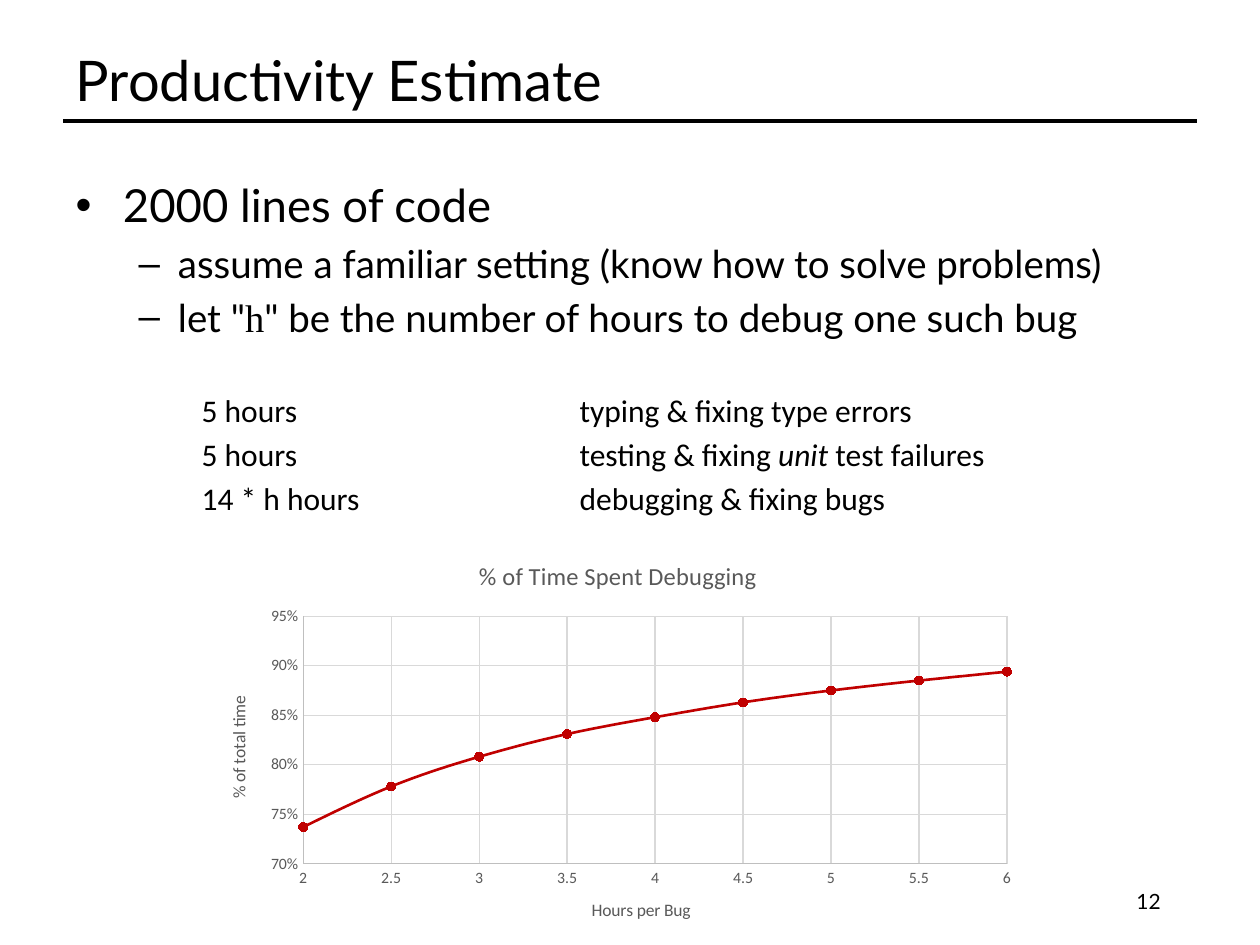
from lxml import etree
from pptx import Presentation
from pptx import util as u
from pptx.chart.data import XyChartData
from pptx.dml.color import RGBColor
from pptx.enum import chart as ch, shapes, text
from pptx.oxml import ns

HUES = {"ink": "000000", "gray": "595959", "axis": "BFBFBF", "grid": "D9D9D9", "red": "C00000"}
HOURS = [2, 2.5, 3, 3.5, 4, 4.5, 5, 5.5, 6]
SHARES = [0.737, 0.778, 0.808, 0.831, 0.848, 0.863, 0.875, 0.885, 0.894]
LINES = [
    (0, 26, "Lato", ["2000 lines of code"]),
    (1, 22, "Lato", ["assume a familiar setting (know how to solve problems)"]),
    (1, 22, "Lato", ['let "', "h", '" be the number of hours to debug one such bug']),
    (2, 18, "Calibri", ["5 hours" + "\t" * 5 + "typing & fixing type errors"]),
    (2, 18, "Calibri", ["5 hours" + "\t" * 5 + "testing & fixing ", "unit", " test failures"]),
    (2, 18, "Calibri", ["14 * h hours" + "\t" * 4 + "debugging & fixing bugs"]),
]


def hue(name):
    """Return the named colour."""
    return RGBColor.from_string(HUES[name])


def style(font, size, face="Lato", tint="ink"):
    """Set size, face and colour of a font."""
    font.size, font.name, font.bold = u.Pt(size), face, False
    font.color.rgb = hue(tint)


def stroke(line, tint, width):
    """Set colour and width of a line."""
    line.color.rgb = hue(tint)
    line.width = u.Pt(width)


def place(shape, box):
    """Move a shape to a box given in centimetres."""
    shape.left, shape.top, shape.width, shape.height = map(u.Cm, box)


def head(slide, box):
    """Fill the title and rule off its lower edge."""
    title = slide.shapes.title
    place(title, box)
    frame = title.text_frame
    frame.text = "Productivity Estimate"
    frame.auto_size = text.MSO_AUTO_SIZE.NONE
    frame.vertical_anchor = text.MSO_ANCHOR.MIDDLE
    para = frame.paragraphs[0]
    para.alignment = text.PP_ALIGN.LEFT
    style(para.runs[0].font, 32)
    left, top, width, height = box
    base = u.Cm(top + height)
    rule = slide.shapes.add_connector(
        shapes.MSO_CONNECTOR.STRAIGHT, u.Cm(left), base, u.Cm(left + width), base)
    stroke(rule.line, "ink", 2)
    etree.SubElement(rule.element.spPr, ns.qn("a:effectLst"))


def body(slide, box):
    """Fill the list with bullets and the table of hours."""
    holder = slide.placeholders[1]
    place(holder, box)
    frame = holder.text_frame
    frame.auto_size = text.MSO_AUTO_SIZE.NONE
    last = 0
    for rank, (level, size, face, parts) in enumerate(LINES):
        para = frame.add_paragraph() if rank else frame.paragraphs[0]
        para.level = level
        for part in parts:
            run = para.add_run()
            run.text = part
            style(run.font, size, "Times New Roman" if part == "h" else face)
            if part == "unit":
                run.font.italic = True
        if level == 2:
            if last != level:
                para.space_before = u.Pt(29)
            props = para._p.get_or_add_pPr()
            props.set("marL", str(u.Cm(2.54)))
            props.set("indent", "0")
            etree.SubElement(props, ns.qn("a:buNone"))
        last = level


def axis(item, label, low, high, step, form):
    """Format one axis of the chart."""
    item.minimum_scale, item.maximum_scale, item.major_unit = low, high, step
    item.major_tick_mark = item.minor_tick_mark = ch.XL_TICK_MARK.NONE
    item.has_major_gridlines = True
    stroke(item.major_gridlines.format.line, "grid", 0.75)
    stroke(item.format.line, "axis", 0.75)
    style(item.tick_labels.font, 9, "Calibri", "gray")
    item.tick_labels.number_format = form
    item.tick_labels.number_format_is_linked = False
    caption(item, label, 10)


def caption(owner, label, size):
    """Give a chart or an axis its title."""
    owner.has_title = True
    frame = owner.chart_title.text_frame if hasattr(owner, "chart_title") else owner.axis_title.text_frame
    frame.text = label
    style(frame.paragraphs[0].runs[0].font, size, "Calibri", "gray")


def layout(chart, **parts):
    """Fix the inner plot area as shares of the chart."""
    area = chart._chartSpace.chart.plotArea
    for old in area.findall(ns.qn("c:layout")):
        area.remove(old)
    outer = etree.Element(ns.qn("c:layout"))
    area.insert(0, outer)
    inner = etree.SubElement(outer, ns.qn("c:manualLayout"))
    modes = {"layoutTarget": "inner", "xMode": "edge", "yMode": "edge"}
    for tag, value in {**modes, **parts}.items():
        etree.SubElement(inner, ns.qn("c:" + tag)).set("val", str(value))


def graph(slide, box):
    """Draw the debugging share as a smooth curve."""
    data = XyChartData()
    series = data.add_series("Series 1")
    for hour, share in zip(HOURS, SHARES):
        series.add_data_point(hour, share)
    kind = ch.XL_CHART_TYPE.XY_SCATTER_SMOOTH
    chart = slide.shapes.add_chart(kind, *map(u.Cm, box), data).chart
    style(chart.font, 10, "Calibri")
    chart.has_legend = False
    caption(chart, "% of Time Spent Debugging", 14)
    axis(chart.category_axis, "Hours per Bug", 2, 6, 0.5, "General")
    axis(chart.value_axis, "% of total time", 0.7, 0.95, 0.05, "0%")
    layout(chart, x=0.12, y=0.19, w=0.85, h=0.61)
    plot = chart.plots[0]
    plot.vary_by_categories = False
    curve = plot.series[0]
    curve._element.find(ns.qn("c:smooth")).set("val", "1")
    stroke(curve.format.line, "red", 1.5)
    mark = curve.marker
    mark.style, mark.size = ch.XL_MARKER_STYLE.CIRCLE, 5
    mark.format.fill.solid()
    mark.format.fill.fore_color.rgb = hue("red")
    stroke(mark.format.line, "red", 0.75)


def foot(slide, box):
    """Write the page number."""
    frame = slide.shapes.add_textbox(*map(u.Cm, box)).text_frame
    frame.word_wrap = True
    frame.vertical_anchor = text.MSO_ANCHOR.MIDDLE
    frame.text = "12"
    para = frame.paragraphs[0]
    para.alignment = text.PP_ALIGN.RIGHT
    style(para.runs[0].font, 12)


def main():
    """Build the slide and save it."""
    deck = Presentation()
    deck.slide_width, deck.slide_height = u.Cm(25.4), u.Cm(19.05)
    slide = deck.slides.add_slide(deck.slide_layouts[1])
    head(slide, (1.27, 0.76, 22.86, 1.68))
    body(slide, (1.27, 3.45, 22.86, 8.03))
    foot(slide, (17.93, 17.65, 5.72, 1.02))
    graph(slide, (4.11, 10.87, 16.69, 8.18))
    deck.save("out.pptx")


if __name__ == "__main__":
    main()
